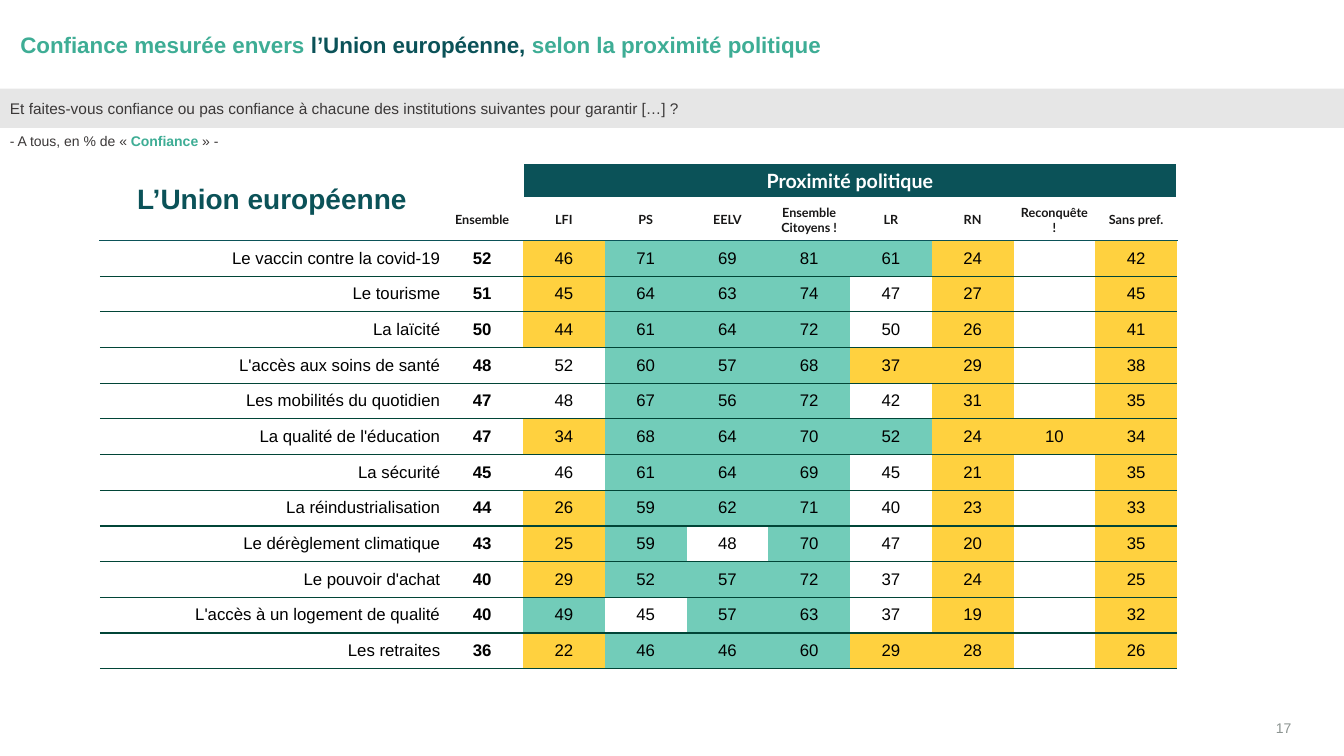
from pptx import Presentation
from pptx.dml.color import RGBColor
from pptx.enum.shapes import MSO_SHAPE
from pptx.enum.text import MSO_ANCHOR as Anchor, MSO_AUTO_SIZE as AutoSize, PP_ALIGN as Align
from pptx.oxml import parse_xml
from pptx.oxml.ns import nsdecls
from pptx.util import Pt

COLORS = {
    "green": "3EAD95", "petrol": "0B5258", "grey": "3B3838", "band": "E6E6E6",
    "page": "8C9491", "white": "FFFFFF", "black": "000000", "header": "181717",
    "rule": "014537", "+": "72CCB9", "-": "FFD13F",
}
NO_STYLE = "{2D5ABB26-0587-4C30-8999-92F81FD0307C}"
PARTIES = ["Ensemble", "LFI", "PS", "EELV", "Ensemble Citoyens !", "LR", "RN",
           "Reconquête !", "Sans pref."]
TRUST = [
    ("Le vaccin contre la covid-19", "52 46- 71+ 69+ 81+ 61+ 24- . 42-"),
    ("Le tourisme", "51 45- 64+ 63+ 74+ 47 27- . 45-"),
    ("La laïcité", "50 44- 61+ 64+ 72+ 50 26- . 41-"),
    ("L'accès aux soins de santé", "48 52 60+ 57+ 68+ 37- 29- . 38-"),
    ("Les mobilités du quotidien", "47 48 67+ 56+ 72+ 42 31- . 35-"),
    ("La qualité de l'éducation", "47 34- 68+ 64+ 70+ 52+ 24- 10- 34-"),
    ("La sécurité", "45 46 61+ 64+ 69+ 45 21- . 35-"),
    ("La réindustrialisation", "44 26- 59+ 62+ 71+ 40 23- . 33-"),
    ("Le dérèglement climatique", "43 25- 59+ 48 70+ 47 20- . 35-"),
    ("Le pouvoir d'achat", "40 29- 52+ 57+ 72+ 37 24- . 25-"),
    ("L'accès à un logement de qualité", "40 49+ 45 57+ 63+ 37 19- . 32-"),
    ("Les retraites", "36 22- 46+ 46+ 60+ 29- 28- . 26-"),
]


def rgb(name):
    """Return the named colour."""
    return RGBColor.from_string(COLORS[name])


def write(frame, *parts, size, color="black", bold=False, font="Arial", align=Align.LEFT):
    """Write plain strings or (text, colour, bold) parts into one paragraph."""
    paragraph = frame.paragraphs[0]
    paragraph.alignment = align
    for part in parts:
        text, tint, weight = (part, color, bold) if isinstance(part, str) else part
        run = paragraph.add_run()
        run.text = text
        run.font.name, run.font.size, run.font.bold = font, Pt(size), weight
        run.font.color.rgb = rgb(tint)


def set_frame(frame, margins, anchor):
    """Set wrapping, anchor and the left, top, right and bottom margins."""
    frame.word_wrap = True
    frame.auto_size = AutoSize.NONE
    frame.vertical_anchor = anchor
    (frame.margin_left, frame.margin_top,
     frame.margin_right, frame.margin_bottom) = map(Pt, margins)


def add_label(slide, box, *parts, margins=(0, 0, 0, 0), anchor=Anchor.TOP, **style):
    """Add a text box."""
    frame = slide.shapes.add_textbox(*map(Pt, box)).text_frame
    set_frame(frame, margins, anchor)
    write(frame, *parts, **style)


def add_title(slide, box, *parts, **style):
    """Place and write the title placeholder."""
    title = slide.shapes.title
    title.left, title.top, title.width, title.height = map(Pt, box)
    set_frame(title.text_frame, (6.5, 0, 0, 0), Anchor.MIDDLE)
    write(title.text_frame, *parts, **style)


def add_band(slide, box, text, **style):
    """Add the grey question band."""
    band = slide.shapes.add_shape(MSO_SHAPE.RECTANGLE, *map(Pt, box))
    band.shadow.inherit = False
    band.fill.solid()
    band.fill.fore_color.rgb = rgb("band")
    band.line.fill.background()
    set_frame(band.text_frame, (7.2, 7.2, 14.4, 7.2), Anchor.MIDDLE)
    write(band.text_frame, text, **style)


def fill_cell(cell, text="", fill=None, borders=(), margin=0.72, **style):
    """Format one cell; borders are (side, colour, width) in L, R, T, B order."""
    cell.vertical_anchor = Anchor.MIDDLE
    cell.margin_left = cell.margin_right = cell.margin_top = cell.margin_bottom = Pt(margin)
    for side, color, width in borders:
        cell._tc.get_or_add_tcPr().append(parse_xml(
            f'<a:ln{side} {nsdecls("a")} w="{Pt(width)}"><a:solidFill>'
            f'<a:srgbClr val="{COLORS[color]}"/></a:solidFill></a:ln{side}>'))
    if fill:
        cell.fill.solid()
        cell.fill.fore_color.rgb = rgb(fill)
    else:
        cell.fill.background()
    if text:
        write(cell.text_frame, text, **style)


def add_trust_table(slide):
    """Add the table of trust by political proximity."""
    row_heights = [26, 29.4] + [25.5] * len(TRUST)
    widths = [243.9] + [58.4] * len(PARTIES)
    frame = slide.shapes.add_table(len(row_heights), len(widths), Pt(71.3), Pt(116.4),
                                   Pt(sum(widths)), Pt(sum(row_heights)))
    table = frame.table
    table.first_row = table.horz_banding = False
    table._tbl.tblPr.find("{*}tableStyleId").text = NO_STYLE
    for row, height in zip(table.rows, row_heights):
        row.height = Pt(height)
    for column, width in zip(table.columns, widths):
        column.width = Pt(width)

    sides = [("L", "white", 1), ("R", "white", 1)]
    top_edges = sides + [("T", "white", 1), ("B", "white", 3)]
    header_edges = sides + [("T", "white", 3), ("B", "petrol", 1)]
    table.cell(0, 2).merge(table.cell(0, len(PARTIES)))
    for column in range(len(widths)):
        heading = "Proximité politique" if column == 2 else ""
        fill_cell(table.cell(0, column), heading, "petrol" if column > 1 else None, top_edges,
                  size=14, color="white", bold=True, font="Lato", align=Align.CENTER)
    for column, party in enumerate([""] + PARTIES):
        fill_cell(table.cell(1, column), party, None, header_edges, margin=3.6,
                  size=9, color="header", bold=True, font="Lato", align=Align.CENTER)
    for row, (topic, scores) in enumerate(TRUST, 2):
        edges = [("T", "petrol" if row == 2 else "rule", 1), ("B", "rule", 1)]
        fill_cell(table.cell(row, 0), topic, None, edges, size=12, align=Align.RIGHT)
        for column, score in enumerate(scores.split(), 1):
            fill_cell(table.cell(row, column), score.strip("+-."),
                      score[-1] if score[-1] in "+-" else None, edges,
                      size=12, bold=column == 1, align=Align.CENTER)


def main():
    """Build the slide and save it."""
    deck = Presentation()
    deck.slide_width, deck.slide_height = Pt(960), Pt(540)
    slide = deck.slides.add_slide(deck.slide_layouts[5])
    add_title(slide, (8, 6.5, 933, 51), "Confiance mesurée envers ",
              ("l’Union européenne, ", "petrol", True), "selon la proximité politique",
              size=16, color="green", bold=True)
    add_band(slide, (0, 63.4, 960, 28),
             "Et faites-vous confiance ou pas confiance à chacune des institutions suivantes "
             "pour garantir […] ?", size=11, color="grey", align=Align.JUSTIFY)
    add_label(slide, (0, 91.4, 960, 17.3), "- A tous, en % de « ",
              ("Confiance", "green", True), " » -", margins=(7.2, 3.6, 7.2, 3.6),
              size=10, color="grey")
    add_trust_table(slide)
    add_label(slide, (98, 129.6, 213, 24.5), "L’Union européenne",
              size=20, color="petrol", bold=True)
    add_label(slide, (880, 509, 42.5, 17.3), "17", anchor=Anchor.BOTTOM,
              size=10, color="page", align=Align.RIGHT)
    deck.save("out.pptx")


if __name__ == "__main__":
    main()
